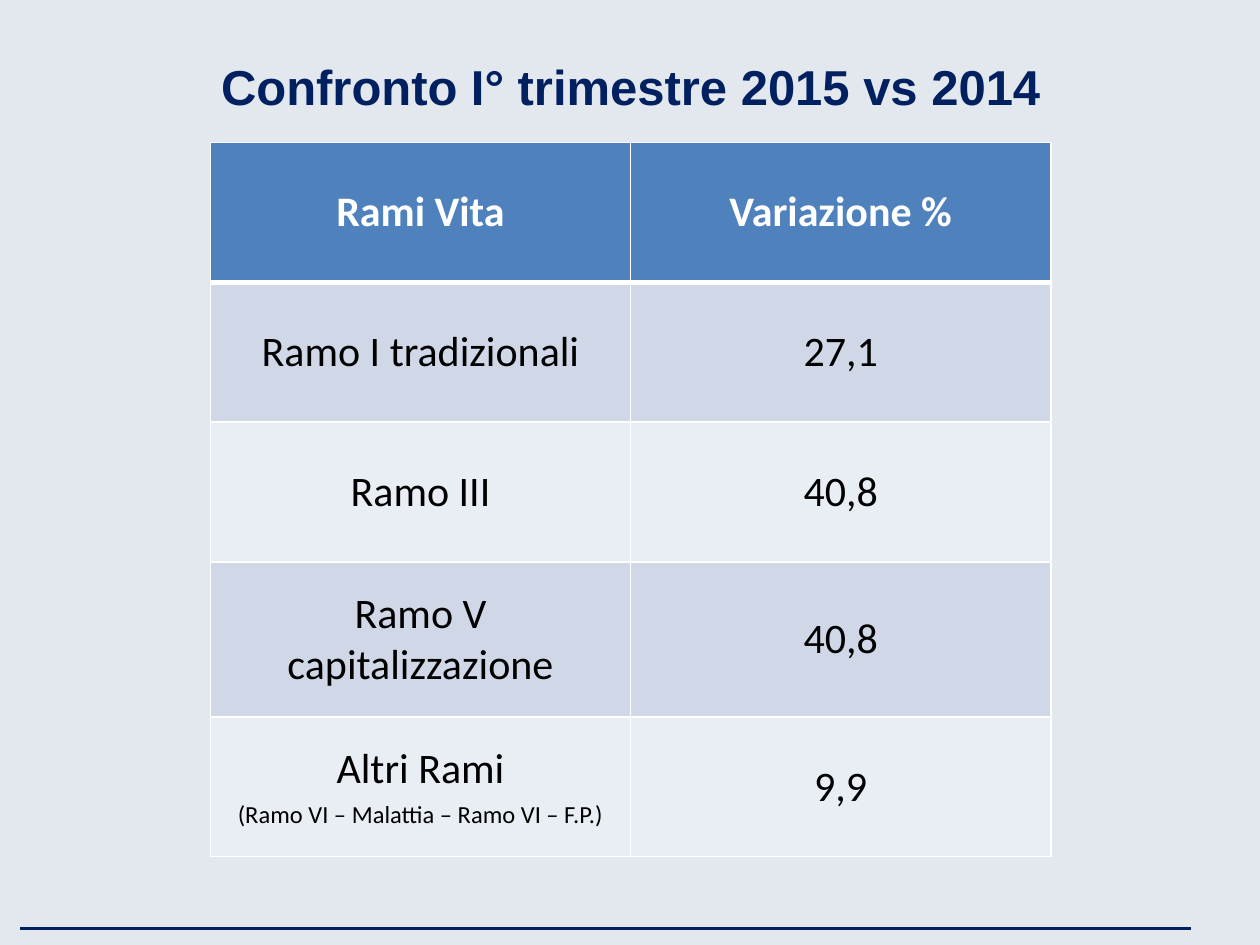
from dataclasses import dataclass

from lxml import etree
from pptx import Presentation
from pptx import util as u
from pptx.dml.color import RGBColor
from pptx.enum import shapes, text
from pptx.oxml import ns

NAVY, WHITE, BLACK = "002060", "FFFFFF", "000000"
HEADER_BLUE = "4F81BD"
BANDS = ("D0D8E8", "E9EDF4")


@dataclass
class Row:
    label: str
    value: str
    height: float = 1.11
    note: str = ""


ROWS = [
    Row("Rami Vita", "Variazione %"),
    Row("Ramo I tradizionali", "27,1"),
    Row("Ramo III", "40,8"),
    Row("Ramo V capitalizzazione", "40,8", height=1.23),
    Row("Altri Rami", "9,9", note="(Ramo VI – Malattia – Ramo VI – F.P.)"),
]


def colour(value: str) -> RGBColor:
    return RGBColor.from_string(value)


def format_para(para, size: float, font: str, ink: str, bold: bool) -> None:
    para.alignment = text.PP_ALIGN.CENTER
    for span in para.runs:
        span.font.size = u.Pt(size)
        span.font.name = font
        span.font.bold = bold
        span.font.color.rgb = colour(ink)


def add_border(cell, side: str, width: float) -> None:
    properties = cell._tc.get_or_add_tcPr()
    line = etree.SubElement(properties, ns.qn(f"a:{side}"), w=str(u.Pt(width)))
    fill = etree.SubElement(line, ns.qn("a:solidFill"))
    etree.SubElement(fill, ns.qn("a:srgbClr"), val=WHITE)


def draw_cell(cell, lines: list[str], row_index: int) -> None:
    header = row_index == 0
    # Borders come before the fill in the cell properties
    for side in ("lnL", "lnR", "lnT", "lnB"):
        heavy = (header and side == "lnB") or (row_index == 1 and side == "lnT")
        add_border(cell, side, 3 if heavy else 1)
    cell.fill.solid()
    cell.fill.fore_color.rgb = colour(HEADER_BLUE if header else BANDS[(row_index - 1) % 2])
    cell.vertical_anchor = text.MSO_ANCHOR.MIDDLE
    cell.text_frame.text = "\n".join(lines)
    for index, para in enumerate(cell.text_frame.paragraphs):
        format_para(para, 14 if index else 24, "Calibri", WHITE if header else BLACK, header)
        if index:
            para.space_before = u.Pt(3)


def draw_title(page, title: str) -> None:
    box = page.shapes.add_textbox(u.Inches(0.28), u.Inches(0.29), u.Inches(9.45), u.Inches(0.79))
    frame = box.text_frame
    frame.word_wrap = True
    frame.vertical_anchor = text.MSO_ANCHOR.MIDDLE
    frame.text = title
    format_para(frame.paragraphs[0], 28, "Arial", NAVY, True)


def draw_table(page, rows: list[Row]) -> None:
    height = sum(row.height for row in rows)
    table = page.shapes.add_table(
        len(rows), 2, u.Inches(1.67), u.Inches(1.13), u.Inches(6.67), u.Inches(height)
    ).table
    for index, row in enumerate(rows):
        table.rows[index].height = u.Inches(row.height)
        labels = [row.label, row.note] if row.note else [row.label]
        draw_cell(table.cell(index, 0), labels, index)
        draw_cell(table.cell(index, 1), [row.value], index)


def draw_footer_line(page) -> None:
    line = page.shapes.add_connector(
        shapes.MSO_CONNECTOR.STRAIGHT,
        u.Inches(0.16), u.Inches(7.37), u.Inches(9.45), u.Inches(7.37),
    )
    line.line.color.rgb = colour(NAVY)
    line.line.width = u.Pt(2)
    etree.SubElement(line._element.spPr, ns.qn("a:effectLst"))


def main() -> None:
    deck = Presentation()
    deck.slide_width, deck.slide_height = u.Inches(10), u.Inches(7.5)
    page = deck.slides.add_slide(deck.slide_layouts[6])

    # Background
    page.background.fill.solid()
    page.background.fill.fore_color.rgb = colour("E3E8EF")

    # Content
    draw_footer_line(page)
    draw_title(page, "Confronto I° trimestre 2015 vs 2014")
    draw_table(page, ROWS)
    deck.save("out.pptx")


if __name__ == "__main__":
    main()
